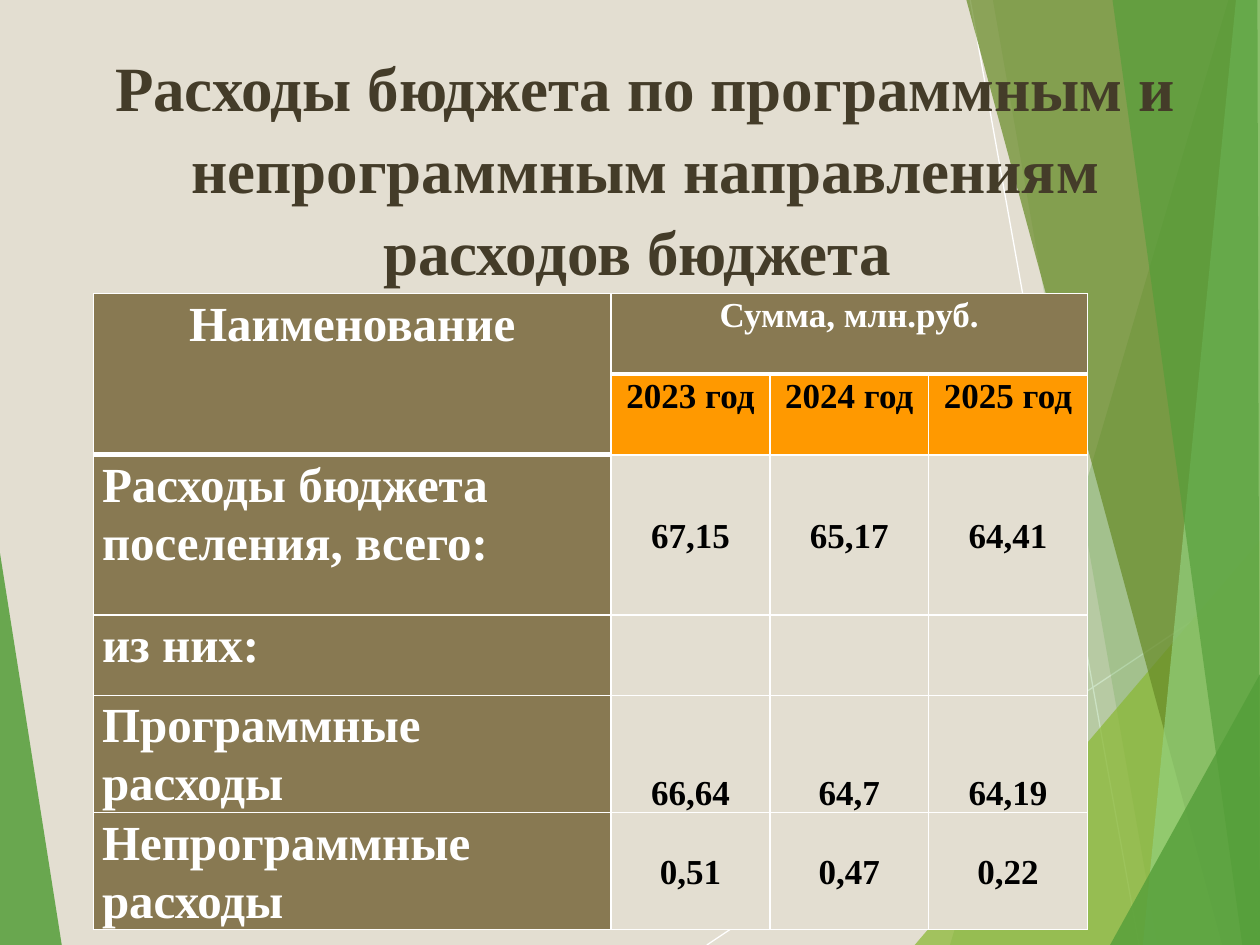
from lxml import etree
from pptx import Presentation
from pptx.dml.color import RGBColor
from pptx.enum.shapes import MSO_CONNECTOR
from pptx.enum.text import MSO_ANCHOR, MSO_AUTO_SIZE, PP_ALIGN
from pptx.oxml.ns import qn
from pptx.util import Inches, Pt

LINE = MSO_CONNECTOR.STRAIGHT
TOP, MID, LOW = MSO_ANCHOR.TOP, MSO_ANCHOR.MIDDLE, MSO_ANCHOR.BOTTOM
CENTER, LEFT = PP_ALIGN.CENTER, PP_ALIGN.LEFT
FIXED = MSO_AUTO_SIZE.NONE

FONT = "Times New Roman"
WHITE, BLACK, BROWN = "FFFFFF", "000000", "443C29"
SAND, OLIVE, ORANGE = "E3DED1", "887952", "FF9900"
GREEN, LIME, MOSS, MINT = "549E39", "8AB833", "678A26", "93D07D"

RAYS = [((5.61, 7.5), (10, 4.57)), ((7.7, 0), (9.04, 7.5))]
SHARDS = [
    (GREEN, 85, [(0, 4.39), (0.49, 7.5), (0, 7.5)]),
    (GREEN, 30, [(9.75, 0), (7.54, 7.5), (10, 7.5), (10, 0)]),
    (GREEN, 20, [(7.88, 0), (9.19, 7.5), (10, 7.5), (10, 0)]),
    (LIME, 72, [(7.26, 7.5), (10, 4.29), (10, 7.5)]),
    (MOSS, 70, [(7.67, 0), (9.7, 7.5), (10, 7.5), (10, 0)]),
    (MINT, 70, [(9.81, 0), (9.07, 7.5), (10, 7.5), (10, 0)]),
    (GREEN, 65, [(8.83, 0), (9.86, 7.5), (10, 7.5), (9.98, 0)]),
    (GREEN, 80, [(8.81, 7.5), (10, 5.35), (10, 7.5)]),
]

TITLE = "Расходы бюджета по программным и непрограммным направлениям расходов бюджета "
COLS = [4.11, 1.26, 1.26, 1.26]
ROWS = [0.64, 0.64, 1.27, 0.64, 0.93, 0.93]
DATA = [
    ["Наименование", "Сумма, млн.руб.", "", ""],
    ["", "2023 год", "2024 год", "2025 год"],
    ["Расходы бюджета поселения, всего:", "67,15", "65,17", "64,41"],
    ["из них:", "", "", ""],
    ["Программные расходы", "66,64", "64,7", "64,19"],
    ["Непрограммные расходы", "0,51", "0,47", "0,22"],
]
ANCHORS = [TOP, TOP, MID, TOP, LOW, MID]


def paint(color, tone):
    color.rgb = RGBColor.from_string(tone)


def fill(part, tone):
    part.fill.solid()
    paint(part.fill.fore_color, tone)


def write(frame, text, size, tone, align, space):
    frame.text = text
    para = frame.paragraphs[0]
    para.alignment = align
    para.line_spacing = space
    for run in para.runs:
        run.font.name = FONT
        run.font.size = Pt(size)
        run.font.bold = True
        paint(run.font.color, tone)


def add_decor(slide, left, top):
    group = slide.shapes.add_group_shape().shapes

    def place(point):
        return Inches(left + point[0]), Inches(top + point[1])

    for start, end in RAYS:
        ray = group.add_connector(LINE, *place(start), *place(end))
        ray.line.width = Pt(0.75)
        paint(ray.line.color, WHITE)
        etree.SubElement(ray.element.spPr, qn("a:effectLst"))
    for tone, alpha, points in SHARDS:
        first, *rest = map(place, points)
        pen = group.build_freeform(*first)
        pen.add_line_segments(rest, close=True)
        shard = pen.convert_to_shape()
        shard.shadow.inherit = False
        fill(shard, tone)
        shard.line.fill.background()
        color = shard.element.spPr.find(".//" + qn("a:srgbClr"))
        etree.SubElement(color, qn("a:alpha"), val=str(alpha * 1000))


def add_title(slide, left, top, width, height):
    title = slide.shapes.title
    title.left, title.top = Inches(left), Inches(top)
    title.width, title.height = Inches(width), Inches(height)
    title.element.getparent().append(title.element)
    frame = title.text_frame
    frame.auto_size = FIXED
    frame.word_wrap = True
    frame.vertical_anchor = TOP
    write(frame, TITLE, 36, BROWN, CENTER, 1.08)


def add_edges(cell, row, col):
    def weight(edge):
        return 3 if edge == 1 or (edge == 2 and col == 0) else 1

    sides = [("L", 1), ("R", 1), ("T", weight(row)), ("B", weight(row + 1))]
    props = cell._tc.get_or_add_tcPr()
    for i, (side, width) in enumerate(sides):
        edge = etree.Element(qn("a:ln" + side), w=str(Pt(width)))
        solid = etree.SubElement(edge, qn("a:solidFill"))
        etree.SubElement(solid, qn("a:srgbClr"), val=WHITE)
        props.insert(i, edge)


def style_cell(cell, row, col):
    label = col == 0
    head = row < 2
    back = OLIVE if label or row == 0 else ORANGE if head else SAND
    fill(cell, back)
    cell.margin_left = cell.margin_right = Inches(0.07)
    cell.margin_top = cell.margin_bottom = 0
    cell.vertical_anchor = TOP if label else ANCHORS[row]
    add_edges(cell, row, col)
    if DATA[row][col]:
        write(cell.text_frame, DATA[row][col], 28 if label else 20,
              WHITE if back == OLIVE else BLACK,
              LEFT if label and not head else CENTER, 1.07)


def add_sums(slide, left, top):
    table = slide.shapes.add_table(
        len(ROWS), len(COLS), Inches(left), Inches(top),
        Inches(sum(COLS)), Inches(sum(ROWS))).table
    for col, width in zip(table.columns, COLS):
        col.width = Inches(width)
    for row, height in zip(table.rows, ROWS):
        row.height = Inches(height)
    table.cell(0, 0).merge(table.cell(1, 0))
    table.cell(0, 1).merge(table.cell(0, 3))
    for row in range(len(ROWS)):
        for col in range(len(COLS)):
            style_cell(table.cell(row, col), row, col)


def main():
    deck = Presentation()
    deck.slide_width, deck.slide_height = Inches(10), Inches(7.5)
    slide = deck.slides.add_slide(deck.slide_layouts[5])
    fill(slide.background, SAND)
    add_decor(slide, 0, 0)
    add_title(slide, 0.67, 0.29, 8.9, 1.83)
    add_sums(slide, 0.74, 2.33)
    deck.save("out.pptx")


if __name__ == "__main__":
    main()
